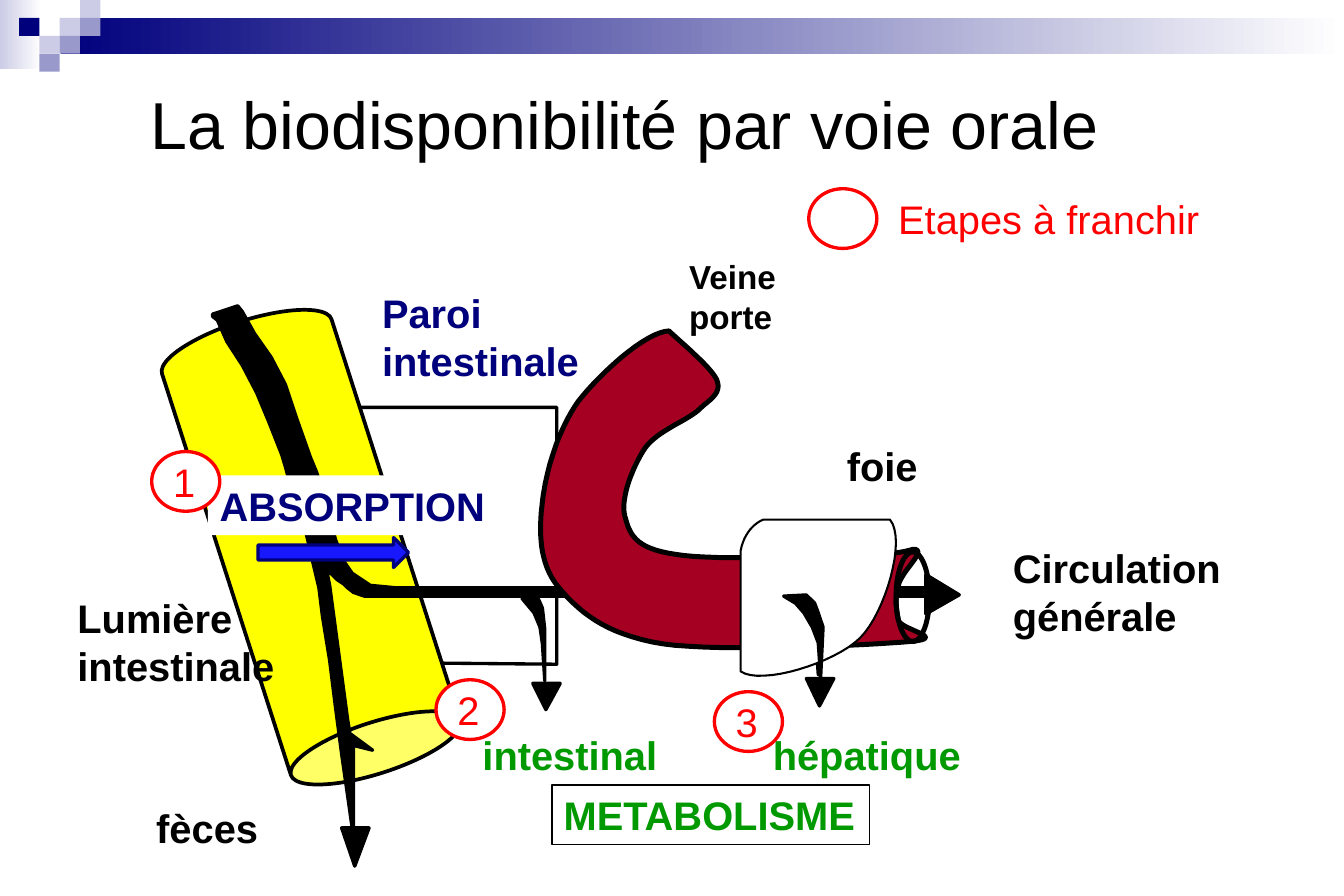
import pptx
import pptx.dml.color
import pptx.enum.shapes
import pptx.enum.text
import pptx.util

Inches, Pt = pptx.util.Inches, pptx.util.Pt
Preset = pptx.enum.shapes.MSO_SHAPE
text_enum = pptx.enum.text
color = pptx.dml.color.RGBColor.from_string

BLACK, WHITE, RED = "000000", "FFFFFF", "FF0000"
NAVY, GREEN, LILAC, MAUVE = "00007D", "009900", "CCCCE6", "9999CC"

presentation = pptx.Presentation()
presentation.slide_width, presentation.slide_height = Inches(11.25), Inches(7.5)
slide = presentation.slides.add_slide(presentation.slide_layouts[5])
shapes = slide.shapes


def figure(fill=None, line=None, width=2, box=None, preset=Preset.RECTANGLE, outline=None):
    """Draw a preset in a box, or a closed outline.

    An outline point of two numbers is a corner; one of six numbers is a
    Bézier step (two handles and an end). All lengths are in inches.
    """
    if outline:
        points = [outline[0]]
        for step in outline[1:]:
            if len(step) == 2:
                points.append(step)
                continue
            controls = [points[-1], step[:2], step[2:4], step[4:]]
            for t in [i / 16 for i in range(1, 17)]:
                weights = ((1 - t) ** 3, 3 * t * (1 - t) ** 2, 3 * t * t * (1 - t), t ** 3)
                points.append(tuple(sum(w * c[axis] for w, c in zip(weights, controls))
                                    for axis in (0, 1)))
        points = [(x * 1000, y * 1000) for x, y in points]
        builder = shapes.build_freeform(*points[0], scale=Inches(1) / 1000)
        builder.add_line_segments(points[1:], close=True)
        shape = builder.convert_to_shape()
    else:
        shape = shapes.add_shape(preset, *map(Inches, box))
    shape.shadow.inherit = False
    if fill:
        shape.fill.solid()
        shape.fill.fore_color.rgb = color(fill)
    else:
        shape.fill.background()
    if line:
        shape.line.color.rgb = color(line)
        shape.line.width = Pt(width)
    else:
        shape.line.fill.background()
    return shape


def write(text, box=None, shape=None, size=24, ink=BLACK, bold=True, wrap=False,
          anchor=text_enum.MSO_ANCHOR.TOP):
    """Put text in the given shape, or in a new text box."""
    shape = shape or shapes.add_textbox(*map(Inches, box))
    frame = shape.text_frame
    frame.text = text
    frame.word_wrap = wrap
    frame.auto_size = text_enum.MSO_AUTO_SIZE.NONE
    frame.vertical_anchor = anchor
    for paragraph in frame.paragraphs:
        paragraph.alignment = text_enum.PP_ALIGN.LEFT
        font = paragraph.runs[0].font
        font.name, font.size, font.bold = "Arial", Pt(size), bold
        font.color.rgb = color(ink)


# Title
title = shapes.title
title.left, title.top, title.width, title.height = map(Inches, (1.16, 0.36, 8.56, 1.34))
write("La biodisponibilité par voie orale", shape=title, size=40, bold=False, wrap=True,
      anchor=text_enum.MSO_ANCHOR.MIDDLE)

# Header: two gradient bands and a mosaic on a grid
for box, start in [((0, 0, 0.35, 0.58), LILAC), ((0.51, 0.15, 10.74, 0.3), NAVY)]:
    band = figure(WHITE, box=box)
    band.fill.gradient()
    band.fill.gradient_angle = 0
    for stop, tone in zip(band.fill.gradient_stops, (start, WHITE)):
        stop.color.rgb = color(tone)
TILE_WIDTH, TILE_HEIGHT = 0.17, 0.15
for column, row, tone in [(3, 1, LILAC), (4, 0, LILAC), (4, 1, MAUVE), (2, 2, LILAC),
                          (1, 1, NAVY), (3, 2, MAUVE), (2, 3, MAUVE)]:
    figure(tone, box=(column * TILE_WIDTH - 0.01, row * TILE_HEIGHT, TILE_WIDTH, TILE_HEIGHT))

# Intestine: wall, lumen and the path of the drug
figure(WHITE, BLACK, outline=[
    (2.97, 3.41), (4.66, 3.41), (4.66, 5.56), (3.56, 5.55), (3.39, 5.02),
    (3.23, 4.38), (3.12, 3.93), (3.03, 3.65)])
lumen = figure("FFFF00", BLACK, 2.25, box=(1.86, 2.6, 1.49, 3.96), preset=Preset.CAN)
lumen.adjustments[0] = 0.289
lumen.rotation = 162.2
figure(BLACK, BLACK, outline=[
    (1.99, 2.56), (2.03, 2.61), (2.13, 2.79), (2.27, 2.99), (2.39, 3.22), (2.49, 3.52),
    (2.6, 3.83), (2.65, 3.95), (2.69, 4.07), (2.7, 4.14), (2.72, 4.18), (2.81, 4.52),
    (2.88, 4.7), (2.95, 4.8), (3.1, 4.9), (3.31, 4.92), (7.74, 4.92), (7.74, 4.99),
    (3.05, 4.99), (2.96, 4.96), (2.91, 4.92), (2.88, 4.89), (2.82, 4.85), (2.77, 4.8),
    (2.74, 4.8), (2.76, 4.9), (2.91, 6.02), (2.93, 6.14), (3.12, 6.28), (2.96, 6.24),
    (2.96, 6.33), (2.96, 6.92), (2.95, 6.94), (2.86, 6.31), (2.81, 5.93), (2.76, 5.53),
    (2.7, 5.16), (2.67, 4.92), (2.62, 4.71), (2.56, 4.45), (2.46, 4.11), (2.44, 4.07),
    (2.42, 4.02), (2.39, 3.91), (2.36, 3.81), (2.25, 3.53), (2.15, 3.29), (2.03, 3.06),
    (1.9, 2.86), (1.82, 2.68), (1.78, 2.65), (1.78, 2.63)])

# Portal vein, its open end, and the liver
figure("A50021", BLACK, 3, outline=[
    (5.6, 2.77), (5.4, 2.78, 5.02, 3.13, 4.84, 3.36), (4.67, 3.6, 4.57, 3.94, 4.54, 4.2),
    (4.51, 4.45, 4.51, 4.71, 4.67, 4.91), (4.84, 5.11, 5.05, 5.31, 5.55, 5.39),
    (6.04, 5.46, 7.29, 5.4, 7.62, 5.37), (7.95, 5.34, 7.53, 5.27, 7.52, 5.19),
    (7.5, 5.11, 7.49, 4.99, 7.52, 4.9), (7.54, 4.8, 7.71, 4.65, 7.68, 4.61),
    (7.64, 4.57, 7.63, 4.64, 7.29, 4.64), (6.96, 4.65, 6, 4.7, 5.65, 4.64),
    (5.31, 4.59, 5.27, 4.47, 5.23, 4.32), (5.19, 4.17, 5.3, 3.9, 5.4, 3.75),
    (5.51, 3.6, 5.76, 3.52, 5.86, 3.42), (5.96, 3.33, 6.04, 3.29, 6, 3.18),
    (5.95, 3.07, 5.68, 2.85, 5.6, 2.77)])
hepatic_branch = [(6.54, 4.97), (6.64, 5.03), (6.71, 5.11), (6.78, 5.23), (6.83, 5.36),
                  (6.85, 5.65), (6.87, 5.23), (6.83, 5.11), (6.8, 5.03), (6.73, 4.96)]
figure(BLACK, BLACK, outline=hepatic_branch)
figure(line=BLACK, width=3, box=(7.5, 4.62, 0.28, 0.75), preset=Preset.OVAL)
figure(WHITE, BLACK, 1.25, outline=[
    (6.39, 4.35), (7.45, 4.35), (7.59, 4.52, 7.41, 5.13, 7.2, 5.34),
    (6.99, 5.55, 6.37, 5.74, 6.2, 5.62), (6.2, 4.61), (6.24, 4.4, 6.39, 4.35, 6.39, 4.35)])

# Branches and arrow tips
figure(BLACK, BLACK, outline=[(x + 0.02, y + 0.02) for x, y in hepatic_branch])
figure(BLACK, BLACK, outline=[
    (4.37, 5.01), (4.47, 5.13), (4.52, 5.25), (4.54, 5.39), (4.56, 5.7), (4.56, 5.27),
    (4.54, 5.09), (4.51, 5.02), (4.47, 4.99)])
for left, top, height in [(4.46, 5.72, 0.22), (2.86, 6.93, 0.32), (6.75, 5.68, 0.23)]:
    figure(BLACK, BLACK,
           outline=[(left + 0.23, top), (left, top), (left + 0.11, top + height)])
figure(BLACK, BLACK, outline=[(7.75, 4.81), (7.75, 5.14), (8.03, 4.98)])

# Labels
for text, box, options in [
    ("Lumière\nintestinale", (0.55, 4.92, 2.04, 0.91), {"wrap": True}),
    ("Paroi\nintestinale", (3.1, 2.37, 1.86, 0.91), {"ink": NAVY}),
    ("Veine porte", (5.67, 2.1, 1.54, 0.77), {"size": 20, "wrap": True}),
    ("Circulation\ngénérale", (8.38, 4.5, 1.96, 0.91), {}),
    ("intestinal", (3.94, 6.07, 1.68, 0.5), {"ink": GREEN}),
    ("hépatique", (6.37, 6.07, 1.79, 0.5), {"ink": GREEN}),
    ("fèces", (1.21, 6.68, 1.06, 0.5), {}),
    ("foie", (6.99, 3.65, 0.8, 0.5), {}),
    ("Etapes à franchir", (7.42, 1.58, 2.75, 0.5), {"ink": RED, "bold": False}),
]:
    write(text, box, **options)
write("METABOLISME", shape=figure(line=BLACK, width=1, box=(4.62, 6.57, 2.66, 0.5)), ink=GREEN)
write("ABSORPTION", shape=figure(WHITE, box=(1.74, 3.98, 2.44, 0.5)), ink=NAVY)
figure("1818FF", NAVY, box=(2.16, 4.5, 1.26, 0.25), preset=Preset.RIGHT_ARROW)

# Steps to pass, and the empty circle of the legend
for number, left, top in [("1", 1.27, 3.78), ("2", 3.65, 5.69), ("3", 5.98, 5.79),
                          (None, 6.77, 1.58)]:
    figure(WHITE, RED, box=(left, top, 0.57, 0.5), preset=Preset.OVAL)
    if number:
        write(number, (left + 0.08, top, 0.39, 0.5), ink=RED, bold=False)

presentation.save("out.pptx")
